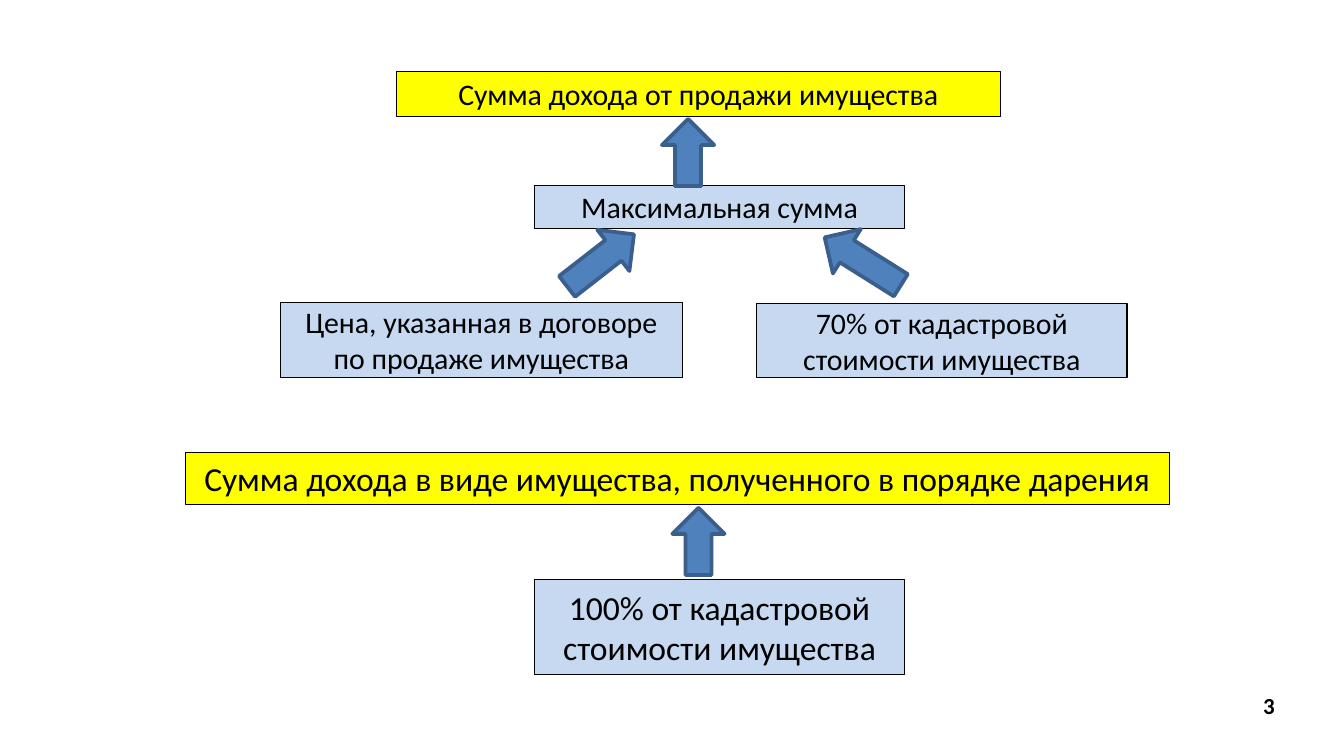
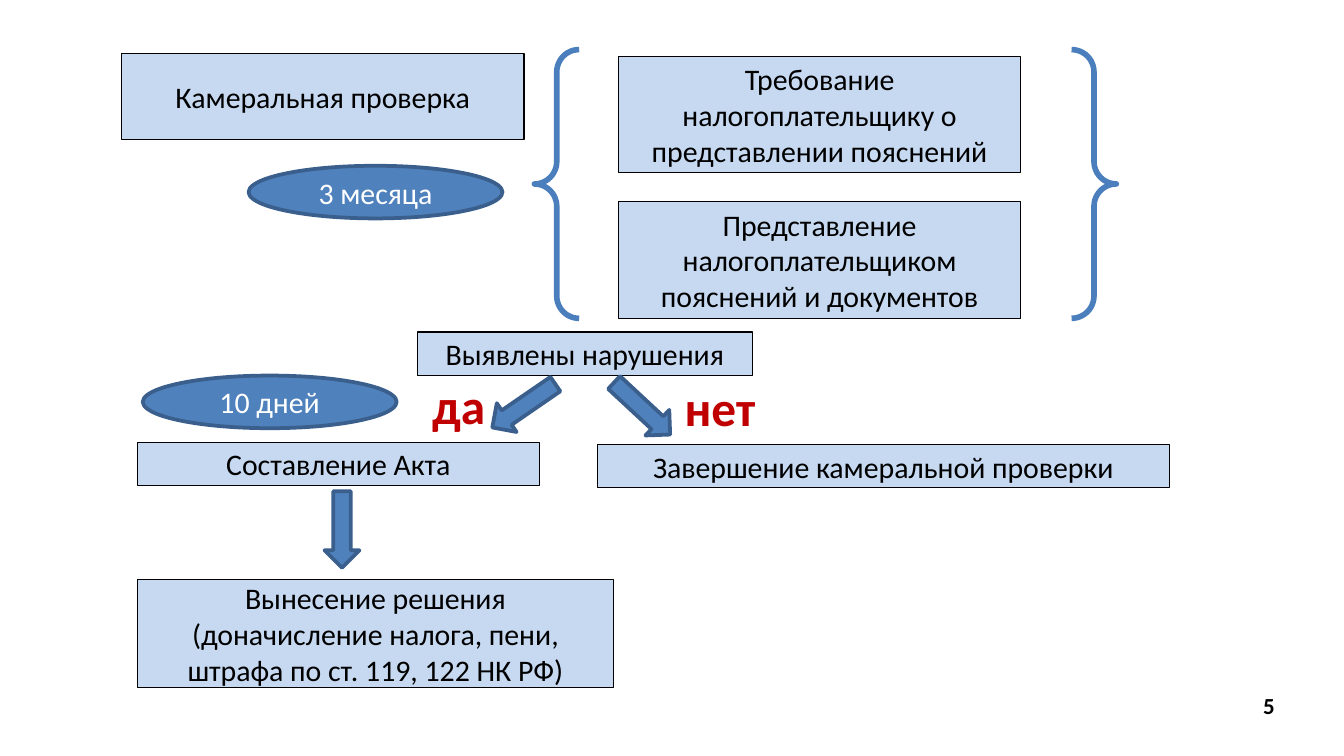
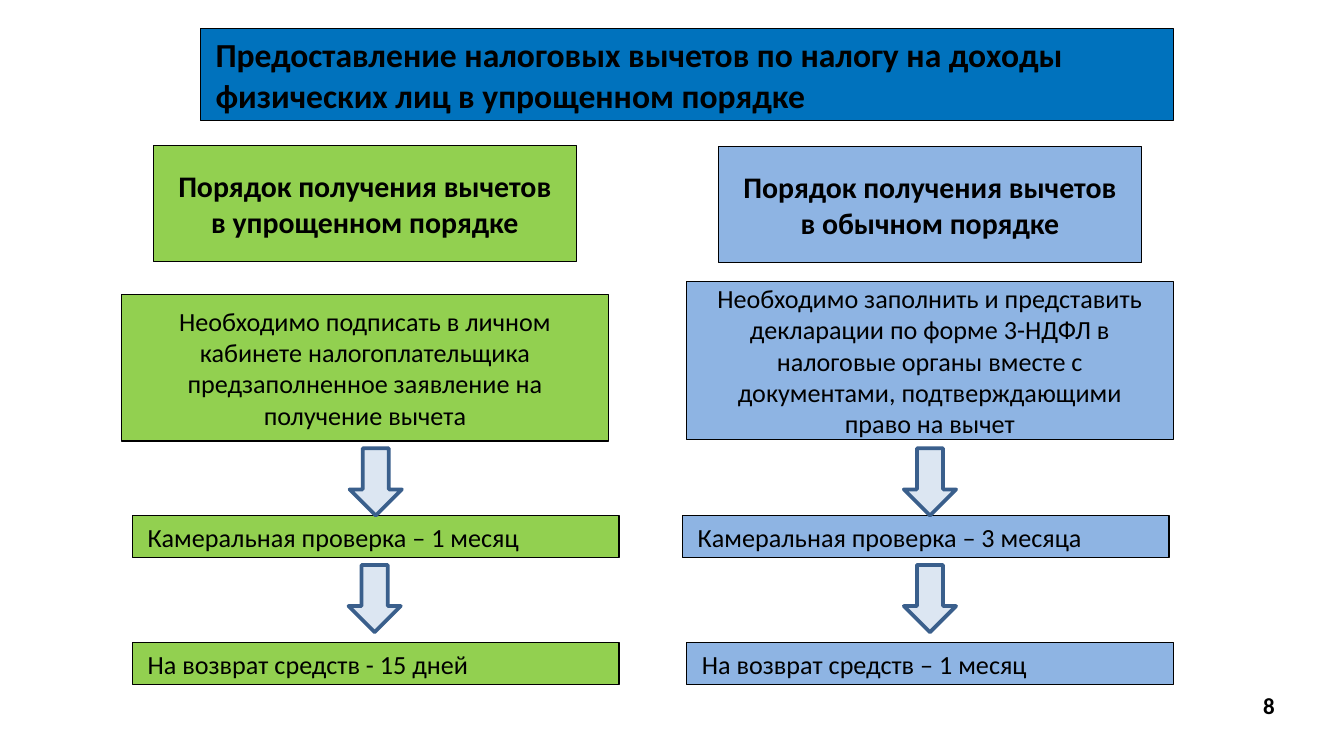
from pptx import Presentation
from pptx.dml.color import RGBColor
from pptx.enum.shapes import MSO_SHAPE
from pptx.enum.text import MSO_ANCHOR, PP_ALIGN
from pptx.util import Pt

RECTANGLE = MSO_SHAPE.RECTANGLE
ELLIPSE = MSO_SHAPE.OVAL
ARROW = MSO_SHAPE.RIGHT_ARROW
BRACES = MSO_SHAPE.DOUBLE_BRACE
MIDDLE = MSO_ANCHOR.MIDDLE
LEFT, CENTER = PP_ALIGN.LEFT, PP_ALIGN.CENTER

FONT = "Calibri"
BLACK, WHITE, RED = "000000", "FFFFFF", "C00000"
YELLOW, PALE_BLUE, TITLE_BLUE = "FFFF00", "C6D9F1", "0072BD"
BLUE, DARK_BLUE, BRACE_BLUE = "4F81BD", "3A5F8C", "4B7EBC"
GREEN, SKY, PALE_ARROW = "92D050", "8EB4E3", "DCE6F2"
BOX_INSETS = (8.2, 4.3)
NUMBER_INSETS = (6.5, 2.9)

# Boxes: text, (left, top, width, height), fill, size
INCOME_BOXES = [
    ("Сумма дохода от продажи имущества", (212.4, 38.2, 323.5, 24.3), YELLOW, 16),
    ("Цена, указанная в договоре по продаже имущества",
     (150.2, 162, 215.5, 40.3), PALE_BLUE, 16),
    ("70% от кадастровой стоимости имущества", (405.4, 162.7, 198.4, 39.6), PALE_BLUE, 16),
    ("Максимальная сумма", (286.3, 99.4, 198.4, 22.9), PALE_BLUE, 16),
    ("Сумма дохода в виде имущества, полученного в порядке дарения",
     (99.4, 242.4, 527, 27.8), YELLOW, 18),
    ("100% от кадастровой стоимости имущества", (286.3, 310.5, 198.4, 51), PALE_BLUE, 18),
]
# Arrows: centre x, centre y, length, thickness, rotation
INCOME_ARROWS = [
    (321.7, 139.5, 45.4, 28, 322.1),
    (462.2, 140, 48.2, 28, 212.1),
    (368.6, 81.7, 36, 28, 270),
    (374.2, 290, 36, 28, 270),
]

AUDIT_BOXES = [
    ("Камеральная проверка", (65.2, 28.8, 215.5, 46)),
    ("Требование налогоплательщику о представлении пояснений",
     (331.4, 30.2, 215.5, 62.4)),
    ("Представление налогоплательщиком пояснений и документов",
     (331.4, 108, 215.5, 62.6)),
    ("Составление Акта", (73.6, 237, 215.5, 23.2)),
    ("Выявлены нарушения", (223.7, 178, 179.3, 23.2)),
    ("Завершение камеральной проверки", (320.2, 238.1, 306.3, 23.2)),
    ("Вынесение решения\n(доначисление налога, пени, штрафа по ст. 119, 122 НК РФ)",
     (73.7, 310.5, 255, 58)),
]
AUDIT_ARROWS = [
    (280.6, 217.4, 41, 18.7, 145.5),
    (344, 218.9, 41, 18.7, 42.9),
    (183.2, 283.7, 41, 18.7, 90),
]
BRACE_AREA = (286.3, 26.6, 311.8, 144)
DEADLINES = [("3 месяца", 133.2, 88.8), ("10 дней", 76.5, 201.2)]
# Answers: text, left, top, width
ANSWERS = [("да", 223.4, 202.7, 45.4), ("нет", 358.6, 203.5, 60)]

DEDUCTION_TITLE = ("Предоставление налоговых вычетов по налогу на доходы "
                   "физических лиц в упрощенном порядке")
STEP_WIDTH = 260.8
STEP_HEIGHT = 22.5
CHECK_TOP, REFUND_TOP = 276.3, 344.3
PROCEDURES = [
    {"fill": GREEN,
     "heading": ("Порядок получения вычетов в упрощенном порядке", 82.1, 77.9),
     "action": ("Необходимо подписать в личном кабинете налогоплательщика "
                "предзаполненное заявление на получение вычета", 65.2, 157.7, 78.7),
     "steps": [("Камеральная проверка – 1 месяц", 70.9, CHECK_TOP),
               ("На возврат средств - 15 дней", 70.9, REFUND_TOP)],
     "arrows": [(201.3, 258.2), (200.7, 320.7)]},
    {"fill": SKY,
     "heading": ("Порядок получения вычетов в обычном порядке", 384.8, 78.4),
     "action": ("Необходимо заполнить и представить декларации по форме 3-НДФЛ "
                "в налоговые органы вместе с документами, подтверждающими "
                "право на вычет", 367.8, 150.8, 84.8),
     "steps": [("Камеральная проверка – 3 месяца", 365.6, CHECK_TOP),
               ("На возврат средств – 1 месяц", 367.8, REFUND_TOP)],
     "arrows": [(498.2, 258.2), (498.2, 320.7)]},
]


def color(value):
    return RGBColor.from_string(value)


def write(shape, text, size, font_color=BLACK, bold=False, align=LEFT,
          insets=BOX_INSETS, wrap=True, line_spacing=None):
    frame = shape.text_frame
    frame.text = text
    frame.word_wrap = wrap
    frame.vertical_anchor = MIDDLE
    frame.margin_left = frame.margin_right = Pt(insets[0])
    frame.margin_top = frame.margin_bottom = Pt(insets[1])
    for paragraph in frame.paragraphs:
        paragraph.alignment = align
        paragraph.line_spacing = line_spacing
        for run in paragraph.runs:
            run.font.name = FONT
            run.font.size = Pt(size)
            run.font.bold = bold
            run.font.color.rgb = color(font_color)


def add_shape(slide, kind, area, fill, line, line_width):
    shape = slide.shapes.add_shape(kind, *map(Pt, area))
    shape.shadow.inherit = False
    if fill:
        shape.fill.solid()
        shape.fill.fore_color.rgb = color(fill)
    else:
        shape.fill.background()
    shape.line.color.rgb = color(line)
    shape.line.width = Pt(line_width)
    return shape


def add_box(slide, text, area, fill=PALE_BLUE, size=16, bold=False, align=CENTER):
    box = add_shape(slide, RECTANGLE, area, fill, BLACK, 0.75)
    write(box, text, size, bold=bold, align=align, wrap=fill != YELLOW)


def add_arrow(slide, center_x, center_y, length=36, thickness=28, rotation=90, fill=BLUE):
    area = (center_x - length / 2, center_y - thickness / 2, length, thickness)
    arrow = add_shape(slide, ARROW, area, fill, DARK_BLUE, 2)
    arrow.rotation = rotation


def add_label(slide, text, area, size, **style):
    label = slide.shapes.add_textbox(*map(Pt, area))
    write(label, text, size, bold=True, **style)


def add_slide(presentation, number):
    slide = presentation.slides.add_slide(presentation.slide_layouts[6])
    add_label(slide, number, (670.2, 368.4, 28.8, 19.4), 12.3, insets=NUMBER_INSETS)
    return slide


def build_income(presentation):
    slide = add_slide(presentation, "3")
    for box in INCOME_BOXES:
        add_box(slide, *box)
    for arrow in INCOME_ARROWS:
        add_arrow(slide, *arrow)


def build_audit(presentation):
    slide = add_slide(presentation, "5")
    for text, area in AUDIT_BOXES:
        add_box(slide, text, area)
    add_shape(slide, BRACES, BRACE_AREA, None, BRACE_BLUE, 3)
    for text, left, top in DEADLINES:
        ellipse = add_shape(slide, ELLIPSE, (left, top, 136, 28.2), BLUE, DARK_BLUE, 2)
        write(ellipse, text, 16, WHITE, align=CENTER)
    for arrow in AUDIT_ARROWS:
        add_arrow(slide, *arrow)
    for text, left, top, width in ANSWERS:
        add_label(slide, text, (left, top, width, 34.6), 26.4,
                  font_color=RED, line_spacing=0.8)


def build_deductions(presentation):
    slide = add_slide(presentation, "8")
    add_box(slide, DEDUCTION_TITLE, (107.3, 15.2, 521.3, 49.5), TITLE_BLUE, 18, True, LEFT)
    for procedure in PROCEDURES:
        fill = procedure["fill"]
        text, left, top = procedure["heading"]
        add_box(slide, text, (left, top, 226.8, 62.4), fill, bold=True)
        text, left, top, height = procedure["action"]
        add_box(slide, text, (left, top, STEP_WIDTH, height), fill, 14)
        for text, left, top in procedure["steps"]:
            add_box(slide, text, (left, top, STEP_WIDTH, STEP_HEIGHT), fill, 14, align=LEFT)
        for center in procedure["arrows"]:
            add_arrow(slide, *center, fill=PALE_ARROW)


def main():
    presentation = Presentation()
    presentation.slide_width, presentation.slide_height = Pt(720), Pt(405)
    build_income(presentation)
    build_audit(presentation)
    build_deductions(presentation)
    presentation.save("out.pptx")


if __name__ == "__main__":
    main()
